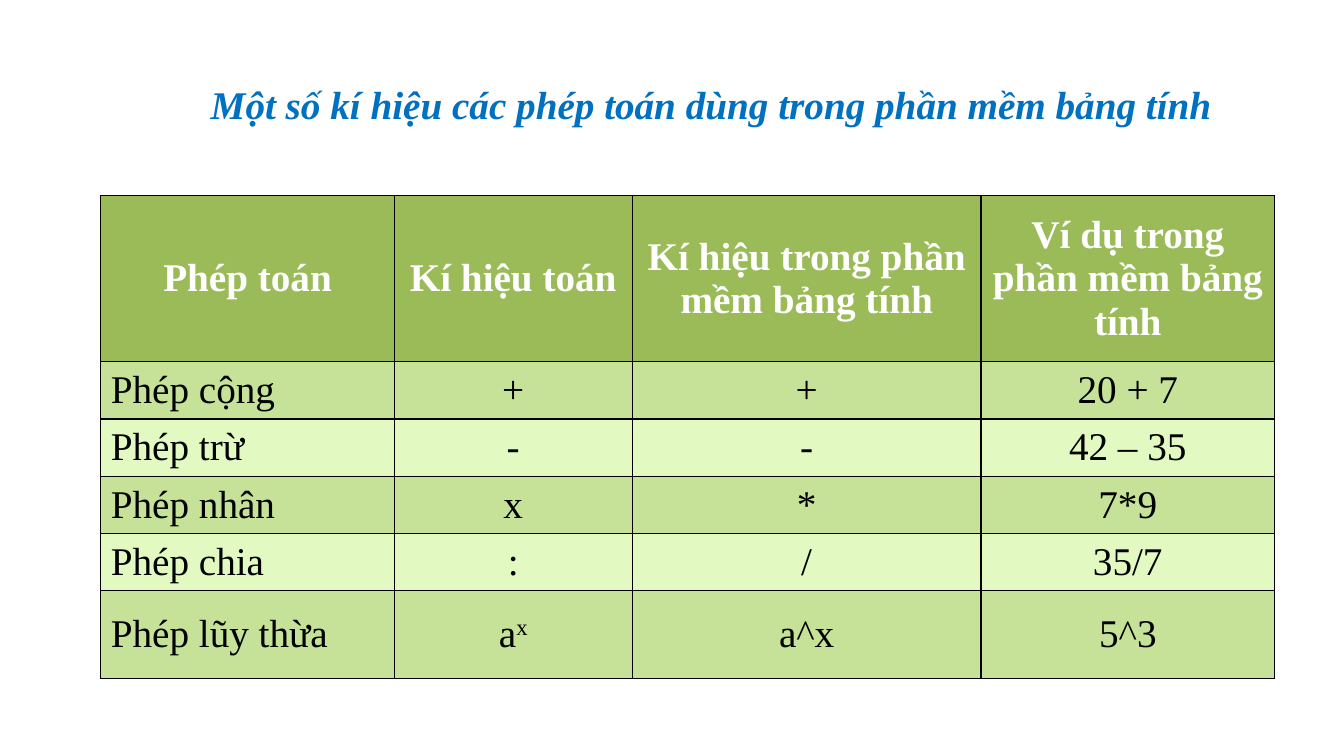
from lxml import etree
from pptx import Presentation
from pptx.dml.color import RGBColor
from pptx.enum.text import MSO_ANCHOR, MSO_AUTO_SIZE, PP_ALIGN
from pptx.oxml.ns import qn
from pptx.util import Pt

HUES = {"title": "0070C0", "head": "9BBB59", "dark": "C6E198",
        "light": "E2FAC2", "white": "FFFFFF", "black": "000000"}
BASE = {"name": "Times New Roman", "size": Pt(28)}
TITLE = "Một số kí hiệu các phép toán dùng trong phần mềm bảng tính"
# A pair holds a text and its superscript
ROWS = [
    ["Phép toán", "Kí hiệu toán", "Kí hiệu trong phần mềm bảng tính",
     "Ví dụ trong phần mềm bảng tính"],
    ["Phép cộng", "+", "+", "20 + 7"],
    ["Phép trừ", "-", "-", "42 – 35"],
    ["Phép nhân", "x", "*", "7*9"],
    ["Phép chia", ":", "/", "35/7"],
    ["Phép lũy thừa", ("a", "x"), "a^x", "5^3"],
]
WIDTHS = [209.6, 170, 249.2, 209.6]
HEIGHTS = [118.8] + [40.8] * 4 + [62.6]


def set_all(item, style):
    for key, value in style.items():
        setattr(item, key, value)


def add_run(para, text, hue, **style):
    run = para.add_run()
    run.text = text
    set_all(run.font, BASE | style)
    run.font.color.rgb = RGBColor.from_string(HUES[hue])
    return run


def add_title(slide):
    title = slide.shapes.title
    set_all(title, {"left": Pt(143.3), "top": Pt(49), "width": Pt(737.3),
                    "height": Pt(43.2)})
    frame = title.text_frame
    set_all(frame, {"word_wrap": False, "vertical_anchor": MSO_ANCHOR.TOP,
                    "auto_size": MSO_AUTO_SIZE.SHAPE_TO_FIT_TEXT})
    para = frame.paragraphs[0]
    set_all(para, {"alignment": PP_ALIGN.JUSTIFY, "line_spacing": 1.15,
                   "space_before": Pt(6), "space_after": Pt(6)})
    add_run(para, TITLE, "title", bold=True, italic=True)


def add_edges(cell):
    props = cell._tc.get_or_add_tcPr()
    for spot, side in enumerate(("lnL", "lnR", "lnT", "lnB")):
        line = etree.Element(qn("a:" + side), w=str(Pt(1)))
        fill = etree.SubElement(line, qn("a:solidFill"))
        etree.SubElement(fill, qn("a:srgbClr"), val=HUES["black"])
        props.insert(spot, line)


def fill_cell(cell, text, row, col):
    head = row == 0
    cell.vertical_anchor = MSO_ANCHOR.MIDDLE
    cell.fill.solid()
    band = "head" if head else "dark" if row % 2 else "light"
    cell.fill.fore_color.rgb = RGBColor.from_string(HUES[band])
    add_edges(cell)
    para = cell.text_frame.paragraphs[0]
    left = col == 0 and not head
    para.alignment = PP_ALIGN.JUSTIFY if left else PP_ALIGN.CENTER
    parts = text if isinstance(text, tuple) else (text,)
    for spot, part in enumerate(parts):
        run = add_run(para, part, "white" if head else "black", bold=head)
        if spot:
            run.font._element.set("baseline", "30000")


def add_grid(slide):
    table = slide.shapes.add_table(
        len(ROWS), len(WIDTHS), Pt(72), Pt(139.6),
        Pt(sum(WIDTHS)), Pt(sum(HEIGHTS))).table
    for col, width in zip(table.columns, WIDTHS):
        col.width = Pt(width)
    for row, height in zip(table.rows, HEIGHTS):
        row.height = Pt(height)
    for row, texts in enumerate(ROWS):
        for col, text in enumerate(texts):
            fill_cell(table.cell(row, col), text, row, col)


def main():
    deck = Presentation()
    set_all(deck, {"slide_width": Pt(960), "slide_height": Pt(540)})
    slide = deck.slides.add_slide(deck.slide_layouts.get_by_name("Title Only"))
    add_title(slide)
    add_grid(slide)
    deck.save("out.pptx")


if __name__ == "__main__":
    main()
